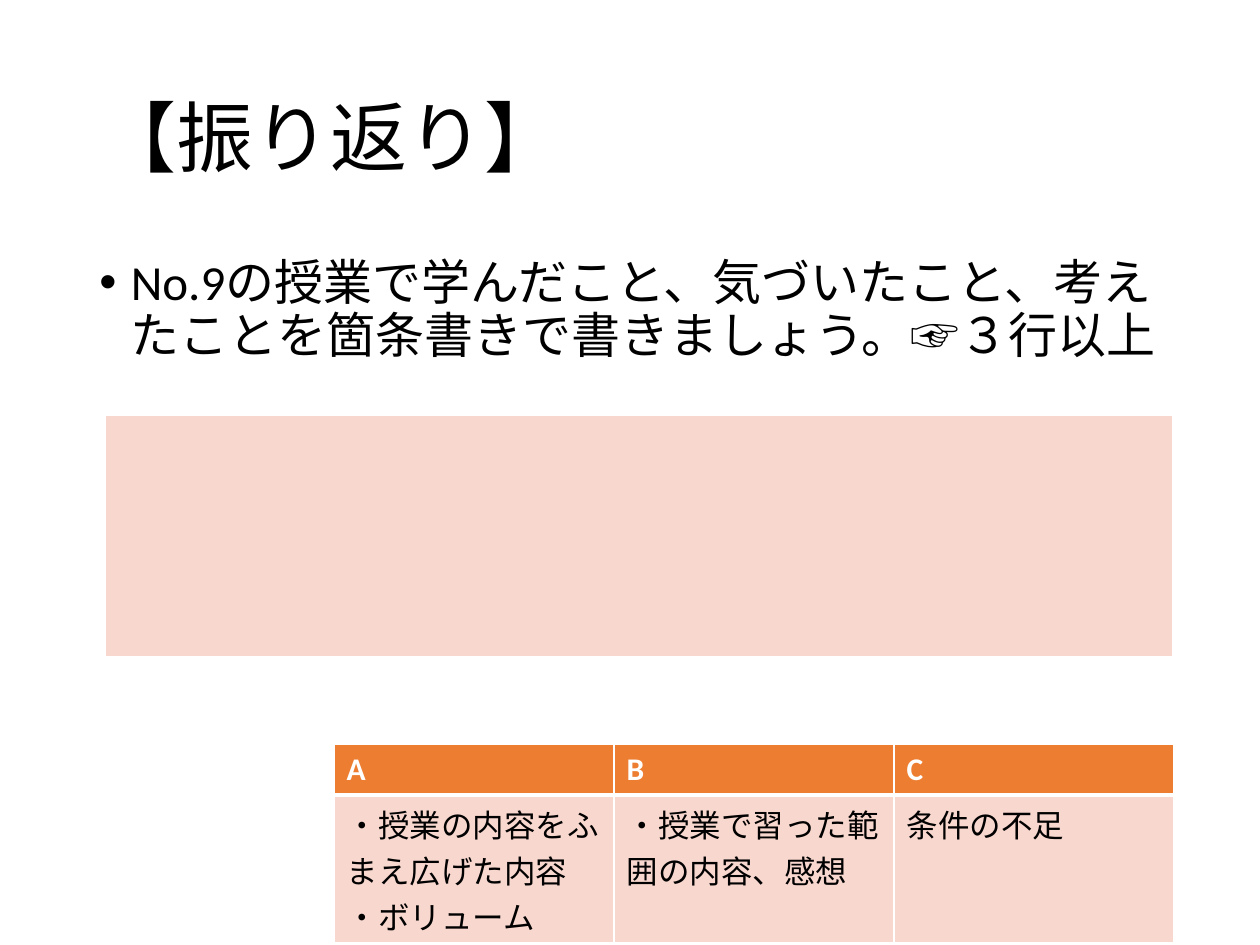
from lxml import etree
from pptx import Presentation
from pptx import util as u
from pptx.dml.color import RGBColor
from pptx.enum import text
from pptx.oxml import ns

# Content
TITLE = "【振り返り】"
TASK = "No.9の授業で学んだこと、気づいたこと、考えたことを箇条書きで書きましょう。☞３行以上"
ANSWER = [[""]]
RUBRIC = [
    ["A", "B", "C"],
    ["・授業の内容をふまえ広げた内容\n・ボリューム", "・授業で習った範囲の内容、感想", "条件の不足"],
]

THEME = dict(
    font="Calibri", ink="000000", white="FFFFFF", header="ED7D31", pale="F8D7CE",
    title=44, body=28, cell=18,
)

# Layout in px: left, top, width, height
SLIDE = (1260, 945)
TITLE_BOX = (87, 50, 1086, 183)
TASK_BOX = (87, 252, 1086, 130)
ANSWER_BOX = (105, 415, 1068, 242)
RUBRIC_BOX = (334, 744, 840, 199)
HEADER_HEIGHT = 51


def px(n):
    return u.Emu(round(n * 914400 / 126))


def style(paragraph, size, color, bold=False):
    for run in paragraph.runs:
        run.font.name = THEME["font"]
        run.font.size = u.Pt(size)
        run.font.bold = bold
        run.font.color.rgb = RGBColor.from_string(color)


def border(cell, side, points):
    line = etree.SubElement(cell._tc.get_or_add_tcPr(), ns.qn(f"a:ln{side}"),
                            w=str(u.Pt(points)))
    fill = etree.SubElement(line, ns.qn("a:solidFill"))
    etree.SubElement(fill, ns.qn("a:srgbClr"), val=THEME["white"])


def add_grid(slide, rows, box, heights, has_header):
    grid = slide.shapes.add_table(len(rows), len(rows[0]), *map(px, box)).table
    for row, height in zip(grid.rows, heights):
        row.height = px(height)
    for r, row in enumerate(rows):
        header = has_header and r == 0
        below_header = has_header and r == 1
        for c, words in enumerate(row):
            cell = grid.cell(r, c)
            cell.text_frame.text = words
            for paragraph in cell.text_frame.paragraphs:
                style(paragraph, THEME["cell"], THEME["white" if header else "ink"], header)
            for side, points in (("L", 1), ("R", 1), ("T", 3 if below_header else 1),
                                 ("B", 3 if header else 1)):
                border(cell, side, points)
            cell.fill.solid()
            cell.fill.fore_color.rgb = RGBColor.from_string(
                THEME["header" if header else "pale"])


def main():
    deck = Presentation()
    deck.slide_width, deck.slide_height = map(px, SLIDE)
    slide = deck.slides.add_slide(deck.slide_layouts[5])

    # Title
    title = slide.shapes.title
    title.left, title.top, title.width, title.height = map(px, TITLE_BOX)
    title.text_frame.text = TITLE
    title.text_frame.vertical_anchor = text.MSO_ANCHOR.MIDDLE
    heading = title.text_frame.paragraphs[0]
    heading.alignment = text.PP_ALIGN.LEFT
    heading.line_spacing = 0.9
    style(heading, THEME["title"], THEME["ink"])

    # Bulleted task
    task = slide.shapes.add_textbox(*map(px, TASK_BOX)).text_frame
    task.word_wrap = True
    task.text = TASK
    bullet = task.paragraphs[0]
    bullet.line_spacing = 0.9
    bullet.space_before = u.Pt(10)
    style(bullet, THEME["body"], THEME["ink"])
    properties = bullet._p.get_or_add_pPr()
    properties.set("marL", str(u.Inches(0.25)))
    properties.set("indent", str(-u.Inches(0.25)))
    etree.SubElement(properties, ns.qn("a:buFont"), typeface="Arial")
    etree.SubElement(properties, ns.qn("a:buChar"), char="•")

    # Answer area and grading rubric
    add_grid(slide, ANSWER, ANSWER_BOX, [ANSWER_BOX[3]], False)
    add_grid(slide, RUBRIC, RUBRIC_BOX, [HEADER_HEIGHT, RUBRIC_BOX[3] - HEADER_HEIGHT], True)

    deck.save("out.pptx")


if __name__ == "__main__":
    main()
